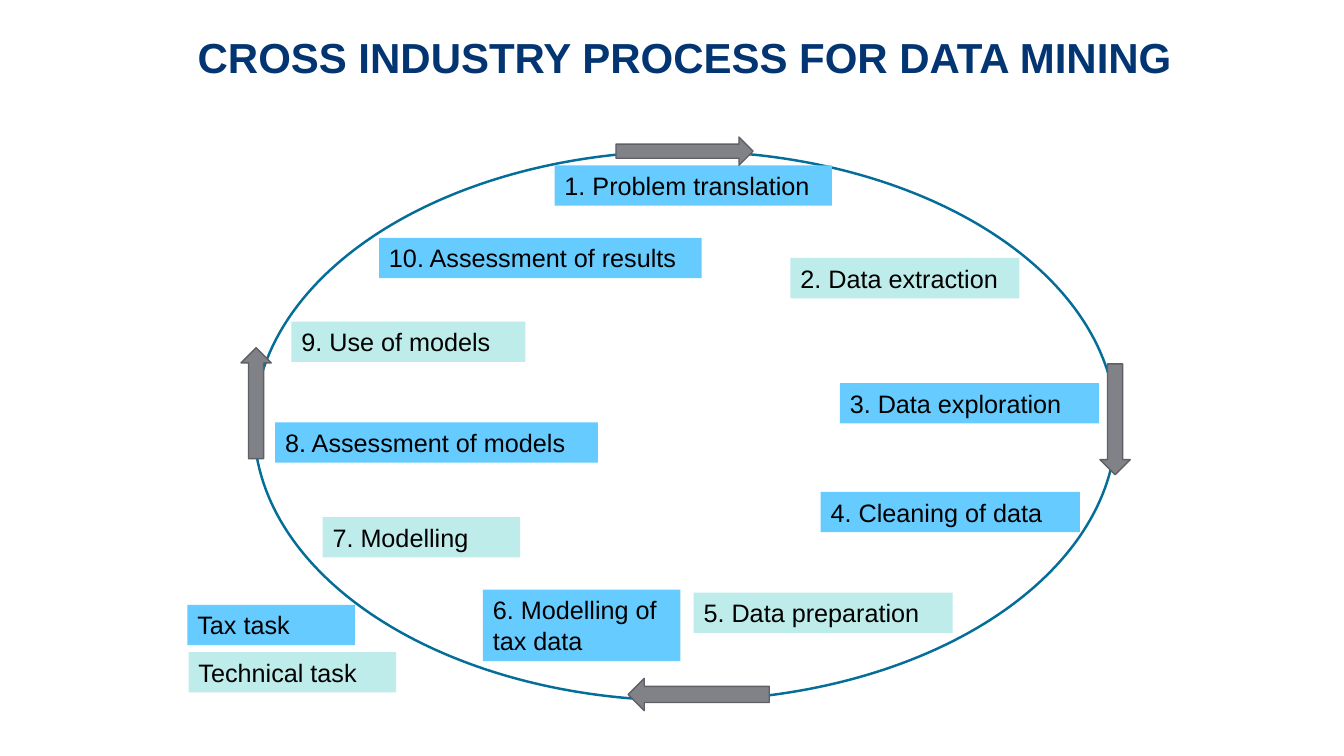
"""Build the data mining process cycle slide."""
from pptx import Presentation
from pptx.dml.color import RGBColor
from pptx.enum.shapes import MSO_SHAPE
from pptx.enum.text import MSO_ANCHOR, MSO_AUTO_SIZE, PP_ALIGN
from pptx.util import Pt

TOP = MSO_ANCHOR.TOP
LEFT, CENTER = PP_ALIGN.LEFT, PP_ALIGN.CENTER
FIT_SHAPE, FIT_NONE = MSO_AUTO_SIZE.SHAPE_TO_FIT_TEXT, MSO_AUTO_SIZE.NONE
RECT, OVAL = MSO_SHAPE.RECTANGLE, MSO_SHAPE.OVAL
RIGHT_ARROW, DOWN_ARROW = MSO_SHAPE.RIGHT_ARROW, MSO_SHAPE.DOWN_ARROW
LEFT_ARROW, UP_ARROW = MSO_SHAPE.LEFT_ARROW, MSO_SHAPE.UP_ARROW

PX = 9144
SLIDE_SIZE = (1333, 750)
FONT = "Arial"
COLORS = {
    "tax": "66CCFF",
    "technical": "BEECEA",
    "cycle": "046E98",
    "arrow": "808288",
    "arrow edge": "5F6065",
    "title": "033572",
    "text": "000000",
    "white": "FFFFFF",
}

TITLE = "CROSS INDUSTRY PROCESS FOR DATA MINING"
TITLE_BOX = (186, 35, 987, 94)
CYCLE_BOX = (252, 150, 855, 545)
LABEL_HEIGHT, TWO_LINE_HEIGHT = 40, 71

TASKS = [
    ("1. Problem translation", "tax", (550, 164, 275, LABEL_HEIGHT)),
    ("2. Data extraction", "technical", (784, 256, 227, LABEL_HEIGHT)),
    ("3. Data exploration", "tax", (833, 380, 257, LABEL_HEIGHT)),
    ("4. Cleaning of data", "tax", (814, 488, 257, LABEL_HEIGHT)),
    ("5. Data preparation", "technical", (688, 588, 257, LABEL_HEIGHT)),
    ("6. Modelling of tax data", "tax", (479, 585, 196, TWO_LINE_HEIGHT)),
    ("7. Modelling", "technical", (320, 513, 196, LABEL_HEIGHT)),
    ("8. Assessment of models", "tax", (273, 419, 320, LABEL_HEIGHT)),
    ("9. Use of models", "technical", (289, 319, 232, LABEL_HEIGHT)),
    ("10. Assessment of results", "tax", (376, 236, 320, LABEL_HEIGHT)),
]
LEGEND = [
    ("Tax task", "tax", (186, 600, 166, LABEL_HEIGHT)),
    ("Technical task", "technical", (187, 647, 206, LABEL_HEIGHT)),
]
ARROWS = [
    (RIGHT_ARROW, (611, 136, 136, 28)),
    (DOWN_ARROW, (1091, 361, 30, 110)),
    (LEFT_ARROW, (623, 673, 140, 32)),
    (UP_ARROW, (239, 345, 30, 110)),
]


def rgb(name):
    return RGBColor.from_string(COLORS[name])


def emu(box):
    return [length * PX for length in box]


def add_figure(slide, kind, box, fill, edge=None, weight=1):
    figure = slide.shapes.add_shape(kind, *emu(box))
    figure.shadow.inherit = False
    figure.fill.solid()
    figure.fill.fore_color.rgb = rgb(fill)
    if edge:
        figure.line.color.rgb = rgb(edge)
        figure.line.width = Pt(weight)
    else:
        figure.line.fill.background()
    return figure


def write(figure, words, size, color, align, fit, bold=False):
    frame = figure.text_frame
    frame.text = words
    frame.word_wrap = True
    frame.auto_size = fit
    frame.vertical_anchor = TOP
    paragraph = frame.paragraphs[0]
    paragraph.alignment = align
    font = paragraph.font
    font.name, font.size, font.bold = FONT, Pt(size), bold
    font.color.rgb = rgb(color)
    return paragraph


def main():
    deck = Presentation()
    deck.slide_width, deck.slide_height = emu(SLIDE_SIZE)
    slide = deck.slides.add_slide(deck.slide_layouts[5])

    title = slide.shapes.title
    title.left, title.top, title.width, title.height = emu(TITLE_BOX)
    heading = write(title, TITLE, 30, "title", CENTER, FIT_NONE, bold=True)
    heading.line_spacing = 0.83

    add_figure(slide, OVAL, CYCLE_BOX, "white", "cycle", 1.75)
    for words, task_type, box in TASKS + LEGEND:
        label = add_figure(slide, RECT, box, task_type)
        write(label, words, 18, "text", LEFT, FIT_SHAPE)
    for direction, box in ARROWS:
        add_figure(slide, direction, box, "arrow", "arrow edge")

    deck.save("out.pptx")


if __name__ == "__main__":
    main()
